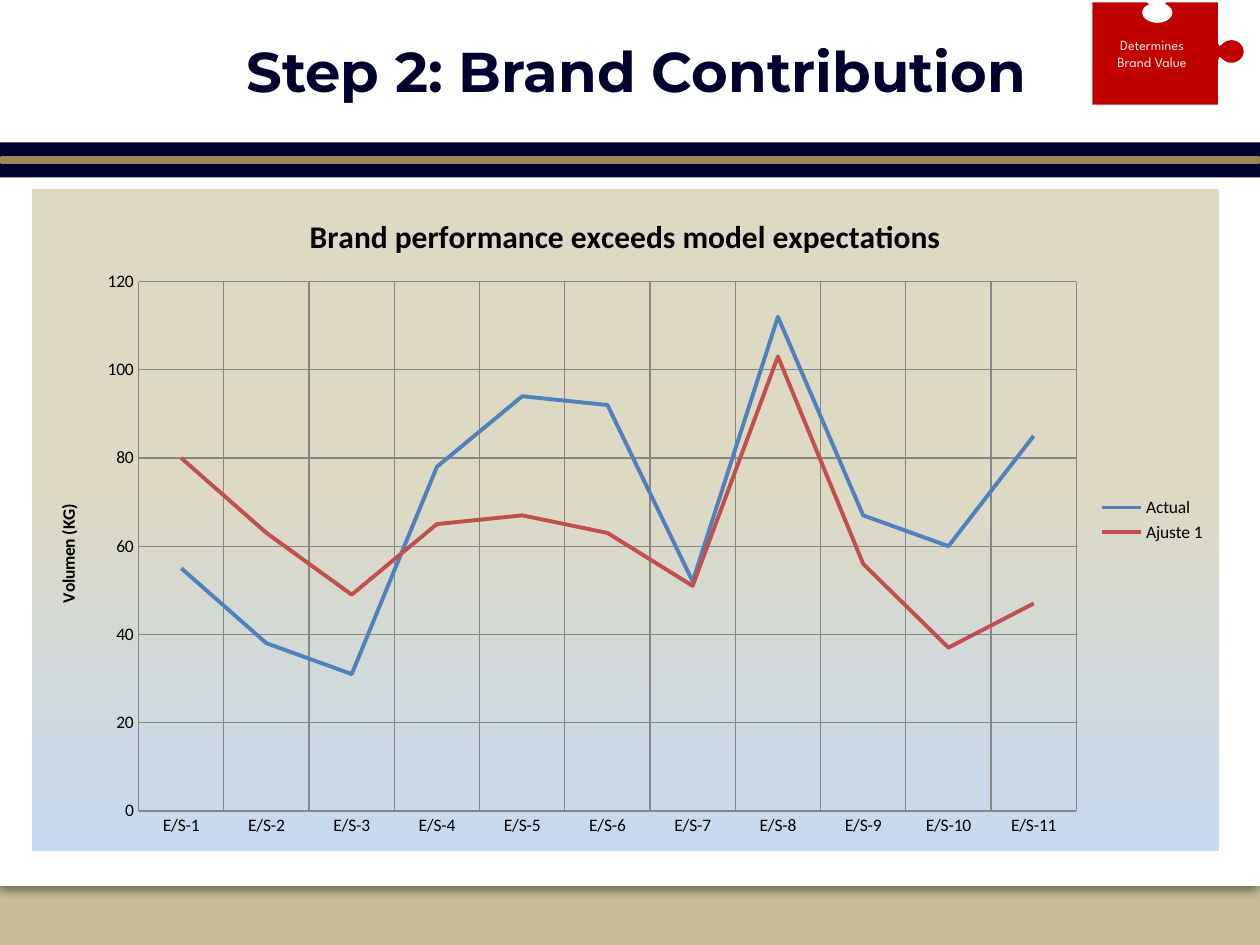
from math import cos, radians, sin

from lxml.etree import SubElement
from pptx import Presentation
from pptx.chart.data import CategoryChartData
from pptx.dml.color import RGBColor
from pptx.enum.chart import XL_CHART_TYPE as ChartType
from pptx.enum.chart import XL_LEGEND_POSITION as LegendPosition
from pptx.enum.chart import XL_TICK_MARK as TickMark
from pptx.enum.shapes import MSO_SHAPE as Preset
from pptx.enum.text import MSO_ANCHOR as Anchor
from pptx.enum.text import PP_ALIGN as Align
from pptx.oxml import parse_xml
from pptx.oxml.ns import nsdecls, qn
from pptx.util import Cm, Pt

WHITE = RGBColor(0xFF, 0xFF, 0xFF)
BLACK = RGBColor(0, 0, 0)
NAVY = RGBColor(0x00, 0x00, 0x2E)
GOLD = RGBColor(0x94, 0x8A, 0x54)
KHAKI = RGBColor(0xC4, 0xBD, 0x97)
SAND = RGBColor(0xDD, 0xD9, 0xC3)
SKY = RGBColor(0xC6, 0xD9, 0xF1)
GRID = RGBColor(0x86, 0x86, 0x86)
BLUE = RGBColor(0x4F, 0x81, 0xBD)
BRICK = RGBColor(0xC0, 0x50, 0x4D)
RED = RGBColor(0xC0, 0x00, 0x00)
CREAM = RGBColor(0xEE, 0xEC, 0xE1)

SERIES = [
    ("Actual", BLUE, [55, 38, 31, 78, 94, 92, 52, 112, 67, 60, 85]),
    ("Ajuste 1", BRICK, [80, 63, 49, 65, 67, 63, 51, 103, 56, 37, 47]),
]


def set_font(font, name, size, color, bold=False):
    font.name, font.size, font.bold = name, Pt(size), bold
    font.color.rgb = color


def add_bar(slide, left, top, width, height, color):
    shape = slide.shapes.add_shape(Preset.RECTANGLE, left, top, width, height)
    shape.shadow.inherit = False
    shape.fill.solid()
    shape.fill.fore_color.rgb = color
    shape.line.fill.background()
    return shape


def add_panel(slide, left, top, width, height):
    panel = add_bar(slide, left, top, width, height, WHITE)
    effects = panel._element.spPr.find(qn("a:effectLst"))
    effects.append(parse_xml(
        f'<a:outerShdw {nsdecls("a")} blurRad="{Pt(5)}" dist="{Pt(2)}" dir="5400000" '
        f'rotWithShape="0"><a:srgbClr val="{BLACK}"><a:alpha val="43000"/></a:srgbClr>'
        '</a:outerShdw>'))


def add_band(slide, left, top, width, height):
    add_bar(slide, left, top, width, height, NAVY)
    stripe_height = Cm(0.08)
    margin = Cm(0.03)
    stripe = add_bar(slide, left + margin, top + (height - stripe_height) // 2,
                     width - 2 * margin, stripe_height, GOLD)
    stripe.line.color.rgb = GOLD
    stripe.line.width = Pt(2)


def add_title(slide, left, top, width, height):
    frame = slide.shapes.add_textbox(left, top, width, height).text_frame
    frame.word_wrap = True
    frame.vertical_anchor = Anchor.MIDDLE
    paragraph = frame.paragraphs[0]
    paragraph.alignment = Align.CENTER
    run = paragraph.add_run()
    run.text = "Step 2: Brand Contribution"
    set_font(run.font, "Montserrat", 32, NAVY, True)
    run._r.get_or_add_rPr().insert(0, parse_xml(
        f'<a:ln {nsdecls("a")} w="{Pt(0.52)}"><a:solidFill>'
        f'<a:srgbClr val="{GOLD}"/></a:solidFill></a:ln>'))


def style_axis(axis, tick_mark):
    axis.has_major_gridlines = True
    axis.major_tick_mark = tick_mark
    axis.minor_tick_mark = TickMark.NONE
    for line in (axis.format.line, axis.major_gridlines.format.line):
        line.color.rgb = GRID
        line.width = Pt(0.75)


def set_chart_background(chart):
    chart_element = chart._chartSpace.find(qn("c:chart"))
    chart_element.addnext(parse_xml(
        f'<c:spPr {nsdecls("c", "a")}><a:gradFill><a:gsLst>'
        f'<a:gs pos="45000"><a:srgbClr val="{SAND}"/></a:gs>'
        f'<a:gs pos="100000"><a:srgbClr val="{SKY}"/></a:gs></a:gsLst>'
        '<a:lin ang="5400000" scaled="0"/></a:gradFill><a:ln><a:noFill/></a:ln></c:spPr>'))
    plot_area = chart_element.find(qn("c:plotArea"))
    plot_area.append(parse_xml(f'<c:spPr {nsdecls("c", "a")}><a:noFill/></c:spPr>'))
    layout = plot_area.find(qn("c:layout"))
    if layout is None:
        layout = parse_xml(f'<c:layout {nsdecls("c")}/>')
        plot_area.insert(0, layout)
    manual = SubElement(layout, qn("c:manualLayout"))
    for tag, value in (("layoutTarget", "inner"), ("xMode", "edge"), ("yMode", "edge"),
                       ("x", 0.09), ("y", 0.14), ("w", 0.79), ("h", 0.8)):
        SubElement(manual, qn(f"c:{tag}")).set("val", str(value))


def add_performance_chart(slide, left, top, width, height):
    data = CategoryChartData()
    data.categories = [f"E/S-{number}" for number in range(1, 12)]
    for name, _, values in SERIES:
        data.add_series(name, values)
    chart = slide.shapes.add_chart(ChartType.LINE, left, top, width, height, data).chart
    set_font(chart.font, "Calibri", 10, BLACK)
    chart.plots[0].vary_by_categories = False
    for series, (_, color, _) in zip(chart.plots[0].series, SERIES):
        series.smooth = False
        series.format.line.color.rgb = color
        series.format.line.width = Pt(2.25)

    style_axis(chart.category_axis, TickMark.NONE)
    style_axis(chart.value_axis, TickMark.INSIDE)
    for owner, frame, text, size in (
            (chart, chart.chart_title.text_frame,
             "Brand performance exceeds model expectations", 18),
            (chart.value_axis, chart.value_axis.axis_title.text_frame, "Volumen (KG)", 10)):
        owner.has_title = True
        frame.text = text
        set_font(frame.paragraphs[0].font, "Calibri", size, BLACK, True)
    chart.chart_title.include_in_layout = False

    chart.has_legend = True
    chart.legend.position = LegendPosition.RIGHT
    chart.legend.include_in_layout = False
    set_chart_background(chart)


def arc(center_x, center_y, radius_x, radius_y, start, end, steps=40):
    angles = [radians(start + (end - start) * step / steps) for step in range(steps + 1)]
    return [(center_x + radius_x * cos(angle), center_y + radius_y * sin(angle))
            for angle in angles]


def add_puzzle_piece(slide, left, top, width, height):
    edge = 0.83
    outline = [
        (0.36, 0), (0.38, 0.02), *arc(0.43, 0.1, 0.1, 0.1, 233, -53),
        (0.48, 0.02), (0.49, 0), (edge, 0),
        (edge, 0.4), (0.84, 0.43), *arc(0.92, 0.48, 0.08, 0.11, 218, 502),
        (0.84, 0.53), (edge, 0.57), (edge, 1), (0, 1),
    ]
    builder = slide.shapes.build_freeform(left, top)
    builder.add_line_segments([(left + x * width, top + y * height) for x, y in outline])
    piece = builder.convert_to_shape()
    piece.shadow.inherit = False
    piece.fill.solid()
    piece.fill.fore_color.rgb = RED
    piece.line.fill.background()
    frame = piece.text_frame
    frame.word_wrap = True
    frame.vertical_anchor = Anchor.MIDDLE
    frame.margin_right = Cm(0.89)
    frame.text = "Determines\nBrand Value"
    for paragraph in frame.paragraphs:
        paragraph.alignment = Align.CENTER
        set_font(paragraph.font, "League Spartan", 8, CREAM)


def main():
    presentation = Presentation()
    presentation.slide_width, presentation.slide_height = Cm(25.4), Cm(19.05)
    slide = presentation.slides.add_slide(presentation.slide_layouts[6])
    slide.background.fill.solid()
    slide.background.fill.fore_color.rgb = KHAKI
    slide_width = presentation.slide_width
    add_panel(slide, 0, 0, slide_width, Cm(17.86))
    add_band(slide, 0, Cm(2.87), slide_width, Cm(0.71))
    add_title(slide, Cm(3.73), Cm(0.43), Cm(18.21), Cm(1.98))
    add_performance_chart(slide, Cm(0.64), Cm(3.81), Cm(23.93), Cm(13.34))
    add_puzzle_piece(slide, Cm(22.02), Cm(0.05), Cm(3.05), Cm(2.06))
    presentation.save("out.pptx")


if __name__ == "__main__":
    main()
